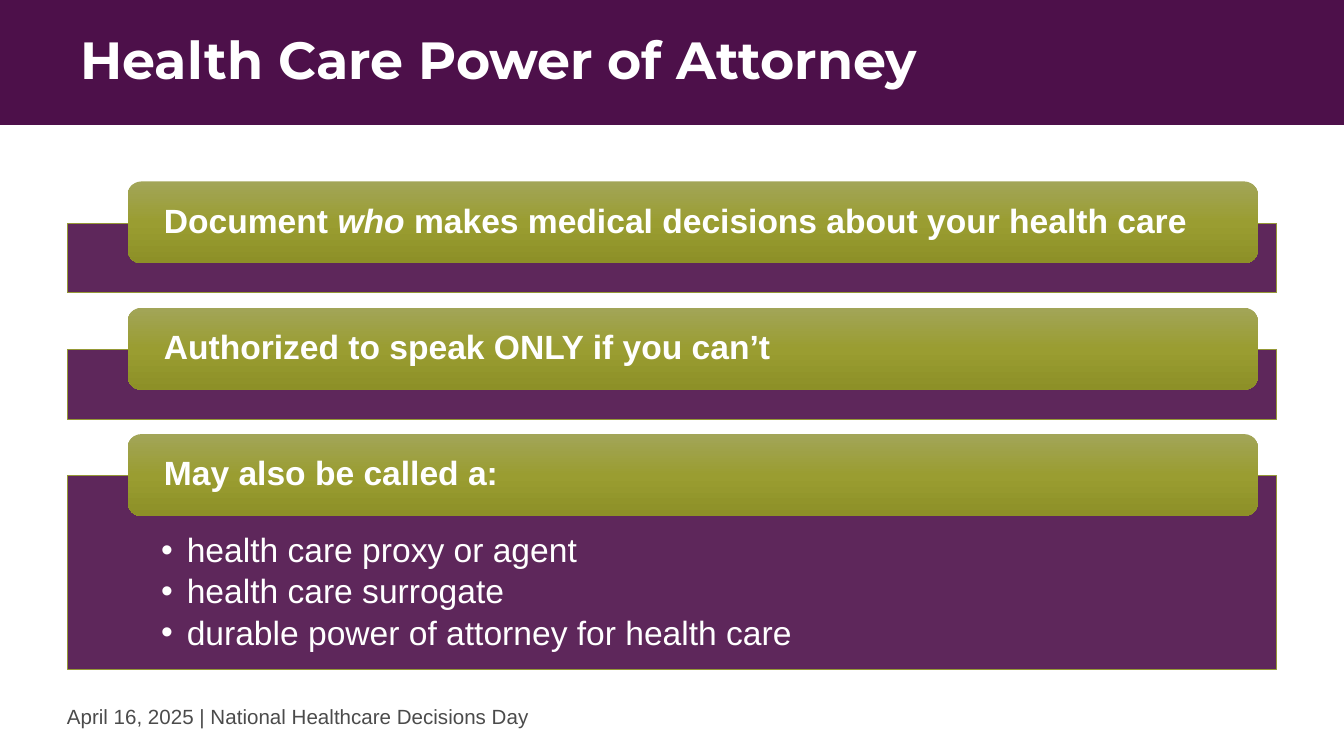
from lxml import etree
from pptx import Presentation
from pptx.dml.color import RGBColor
from pptx.enum.shapes import MSO_SHAPE
from pptx.enum.text import MSO_ANCHOR, MSO_AUTO_SIZE, PP_ALIGN
from pptx.oxml.ns import qn
from pptx.util import Inches, Pt

RECT, ROUND = MSO_SHAPE.RECTANGLE, MSO_SHAPE.ROUNDED_RECTANGLE
TOP, MIDDLE = MSO_ANCHOR.TOP, MSO_ANCHOR.MIDDLE
LEFT = PP_ALIGN.LEFT
NO_FIT, GROW = MSO_AUTO_SIZE.NONE, MSO_AUTO_SIZE.SHAPE_TO_FIT_TEXT

SECTIONS = [
    ([("Document ", False), ("who", True),
      (" makes medical decisions about your health care", False)], []),
    ([("Authorized to speak ONLY if you can’t", False)], []),
    ([("May also be called a:", False)],
     ["health care proxy or agent", "health care surrogate",
      "durable power of attorney for health care"]),
]


def rgb(value):
    return RGBColor.from_string(value)


def add_text(p, text, size=18, font="Arial", color="FFFFFF", bold=False, italic=False):
    r = p.add_run()
    r.text = text
    r.font.size = Pt(size)
    r.font.name = font
    r.font.bold = bold
    r.font.italic = italic
    r.font.color.rgb = rgb(color)


class Deck:
    purple = "4D104A"
    olive = "959836"
    gradient = [(0, "A2A558"), (50, "9A9D31"), (100, "8D9027")]

    def __init__(self, prs):
        self.s = prs.slides.add_slide(prs.slide_layouts[5])

    def frame(self, sp, insets, anchor):
        tf = sp.text_frame
        tf.word_wrap = True
        tf.auto_size = NO_FIT
        tf.vertical_anchor = anchor
        tf.margin_left, tf.margin_top, tf.margin_right, tf.margin_bottom = map(Inches, insets)
        return tf

    def shape(self, kind, *box):
        sp = self.s.shapes.add_shape(kind, *map(Inches, box))
        sp.shadow.inherit = False
        sp.line.fill.background()
        return sp

    def rect(self, *box):
        sp = self.shape(RECT, *box)
        sp.fill.solid()
        sp.fill.fore_color.rgb = rgb(self.purple)
        return sp

    def title(self, text):
        band = self.rect(0, 0, 10, 0.93)
        sp = self.s.shapes.title
        band._element.addnext(sp._element)
        sp.left, sp.top, sp.width, sp.height = map(Inches, (0.5, 0, 9, 0.93))
        p = self.frame(sp, (0.1, 0.05, 0.1, 0.05), MIDDLE).paragraphs[0]
        p.alignment = LEFT
        p.line_spacing = 0.9
        add_text(p, text, size=28, font="Montserrat", bold=True)

    def panel(self, top, height, bullets):
        sp = self.rect(0.5, top, 9, height)
        color = sp._element.spPr.find(qn("a:solidFill"))[0]
        etree.SubElement(color, qn("a:alpha"), val="90000")
        sp.line.color.rgb = rgb(self.olive)
        sp.line.width = Pt(0.5)
        tf = self.frame(sp, (0.7, 0.43, 0.7, 0.14), TOP)
        for i, text in enumerate(bullets):
            p = tf.add_paragraph() if i else tf.paragraphs[0]
            p.alignment = LEFT
            p.line_spacing = 0.9
            p.space_after = Pt(2.7)
            pPr = p._p.get_or_add_pPr()
            pPr.set("marL", str(Inches(0.19)))
            pPr.set("indent", str(-Inches(0.19)))
            etree.SubElement(pPr, qn("a:buFont"), typeface="Arial")
            etree.SubElement(pPr, qn("a:buChar"), char="•")
            add_text(p, text)

    def pill(self, top, runs):
        sp = self.shape(ROUND, 0.95, top, 8.41, 0.61)
        sp.fill.gradient()
        sp.fill.gradient_angle = 270
        stops = sp._element.spPr.find(qn("a:gradFill")).find(qn("a:gsLst"))
        for stop in list(stops):
            stops.remove(stop)
        for pos, color in self.gradient:
            stop = etree.SubElement(stops, qn("a:gs"), pos=str(pos * 1000))
            etree.SubElement(stop, qn("a:srgbClr"), val=color)
        p = self.frame(sp, (0.24, 0, 0.24, 0), MIDDLE).paragraphs[0]
        p.alignment = LEFT
        p.line_spacing = 0.9
        for text, italic in runs:
            add_text(p, text, bold=True, italic=italic)

    def footer(self, text):
        sp = self.s.shapes.add_textbox(*map(Inches, (0.4, 5.19, 5, 0.29)))
        tf = self.frame(sp, (0.1, 0.05, 0.1, 0.05), TOP)
        tf.auto_size = GROW
        add_text(tf.paragraphs[0], text, size=11, color="4B4B4B")


def main():
    prs = Presentation()
    prs.slide_width = Inches(10)
    prs.slide_height = prs.slide_width * 9 // 16
    deck = Deck(prs)
    deck.title("Health Care Power of Attorney")
    for i, (heading, bullets) in enumerate(SECTIONS):
        top = 1.66 + 0.94 * i
        deck.panel(top, 1.44 if bullets else 0.52, bullets)
        deck.pill(top - 0.31, heading)
    deck.footer("April 16, 2025 | National Healthcare Decisions Day")
    prs.save("out.pptx")


if __name__ == "__main__":
    main()
